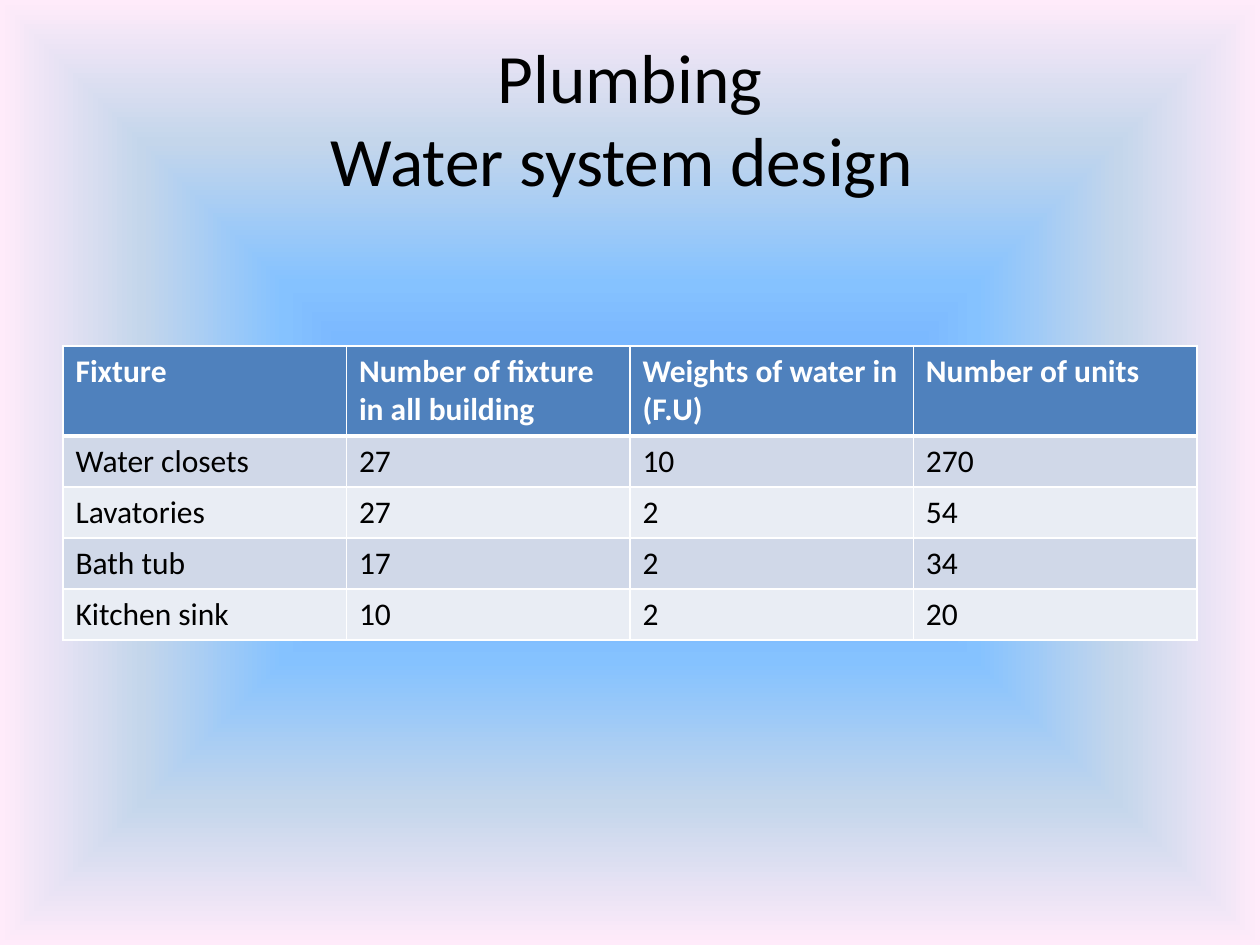
import pptx
import pptx.dml.color
import pptx.enum.text
import pptx.oxml
import pptx.oxml.ns
import pptx.util
from dataclasses import dataclass

TITLE = "Plumbing\vWater system design "
FIXTURES = [
    ("Fixture", "Number of fixture in all building", "Weights of water in (F.U)", "Number of units"),
    ("Water closets", "27", "10", "270"),
    ("Lavatories", "27", "2", "54"),
    ("Bath tub", "17", "2", "34"),
    ("Kitchen sink", "10", "2", "20"),
]

PX = 914400 // 126
SLIDE_WIDTH, SLIDE_HEIGHT = 1260, 945
MARGIN = 63
CONTENT_WIDTH = SLIDE_WIDTH - 2 * MARGIN
TITLE_TOP, TITLE_HEIGHT = 38, 158
TABLE_TOP, HEADER_HEIGHT, ROW_HEIGHT = 346, 90, 51


@dataclass(frozen=True)
class Theme:
    font: str = "Calibri"
    title_size: float = 39.6
    table_size: int = 18
    text: str = "000000"
    header_text: str = "FFFFFF"
    header_fill: str = "4F81BD"
    bands: tuple = ("D0D8E8", "E9EDF4")
    border: str = "FFFFFF"
    thin: int = 1
    thick: int = 3
    background: tuple = ((0, "5E9EFF"), (40, "85C2FF"), (70, "C4D6EB"), (100, "FFEBFA"))


THEME = Theme()
NAMESPACES = pptx.oxml.ns.nsdecls("a", "p")


def px(*lengths):
    return [pptx.util.Emu(length * PX) for length in lengths]


def rgb(color):
    return pptx.dml.color.RGBColor.from_string(color)


def set_font(paragraph, size, color, bold=False):
    font = paragraph.font
    font.name, font.size, font.bold = THEME.font, pptx.util.Pt(size), bold
    font.color.rgb = rgb(color)


def set_background(slide):
    """Fill the slide with a gradient that spreads from its centre."""
    stops = "".join(
        f'<a:gs pos="{percent * 1000}"><a:srgbClr val="{color}"/></a:gs>'
        for percent, color in THEME.background
    )
    background = pptx.oxml.parse_xml(
        f'<p:bg {NAMESPACES}><p:bgPr><a:gradFill rotWithShape="1"><a:gsLst>{stops}</a:gsLst>'
        '<a:path path="rect"><a:fillToRect l="50000" t="50000" r="50000" b="50000"/></a:path>'
        "</a:gradFill><a:effectLst/></p:bgPr></p:bg>"
    )
    slide.element.cSld.insert(0, background)


def set_borders(cell, top, bottom):
    properties = cell._tc.get_or_add_tcPr()
    for side, width in (("L", THEME.thin), ("R", THEME.thin), ("T", top), ("B", bottom)):
        properties.append(pptx.oxml.parse_xml(
            f'<a:ln{side} {NAMESPACES} w="{pptx.util.Pt(width)}"><a:solidFill>'
            f'<a:srgbClr val="{THEME.border}"/></a:solidFill></a:ln{side}>'
        ))


def add_title(slide):
    box = slide.shapes.add_textbox(*px(MARGIN, TITLE_TOP, CONTENT_WIDTH, TITLE_HEIGHT))
    frame = box.text_frame
    frame.word_wrap = True
    frame.vertical_anchor = pptx.enum.text.MSO_ANCHOR.MIDDLE
    paragraph = frame.paragraphs[0]
    paragraph.text = TITLE
    paragraph.alignment = pptx.enum.text.PP_ALIGN.CENTER
    set_font(paragraph, THEME.title_size, THEME.text)


def add_fixture_table(slide):
    row_count, column_count = len(FIXTURES), len(FIXTURES[0])
    height = HEADER_HEIGHT + (row_count - 1) * ROW_HEIGHT
    table = slide.shapes.add_table(
        row_count, column_count, *px(MARGIN, TABLE_TOP, CONTENT_WIDTH, height)
    ).table
    for row_index, values in enumerate(FIXTURES):
        header = row_index == 0
        table.rows[row_index].height, = px(HEADER_HEIGHT if header else ROW_HEIGHT)
        fill = THEME.header_fill if header else THEME.bands[(row_index - 1) % 2]
        for column_index, value in enumerate(values):
            cell = table.cell(row_index, column_index)
            cell.text = value
            set_font(cell.text_frame.paragraphs[0], THEME.table_size,
                     THEME.header_text if header else THEME.text, header)
            set_borders(cell, THEME.thick if row_index == 1 else THEME.thin,
                        THEME.thick if header else THEME.thin)
            cell.fill.solid()
            cell.fill.fore_color.rgb = rgb(fill)


def main():
    presentation = pptx.Presentation()
    presentation.slide_width, presentation.slide_height = px(SLIDE_WIDTH, SLIDE_HEIGHT)
    slide = presentation.slides.add_slide(presentation.slide_layouts[6])
    set_background(slide)
    add_title(slide)
    add_fixture_table(slide)
    presentation.save("out.pptx")


if __name__ == "__main__":
    main()
